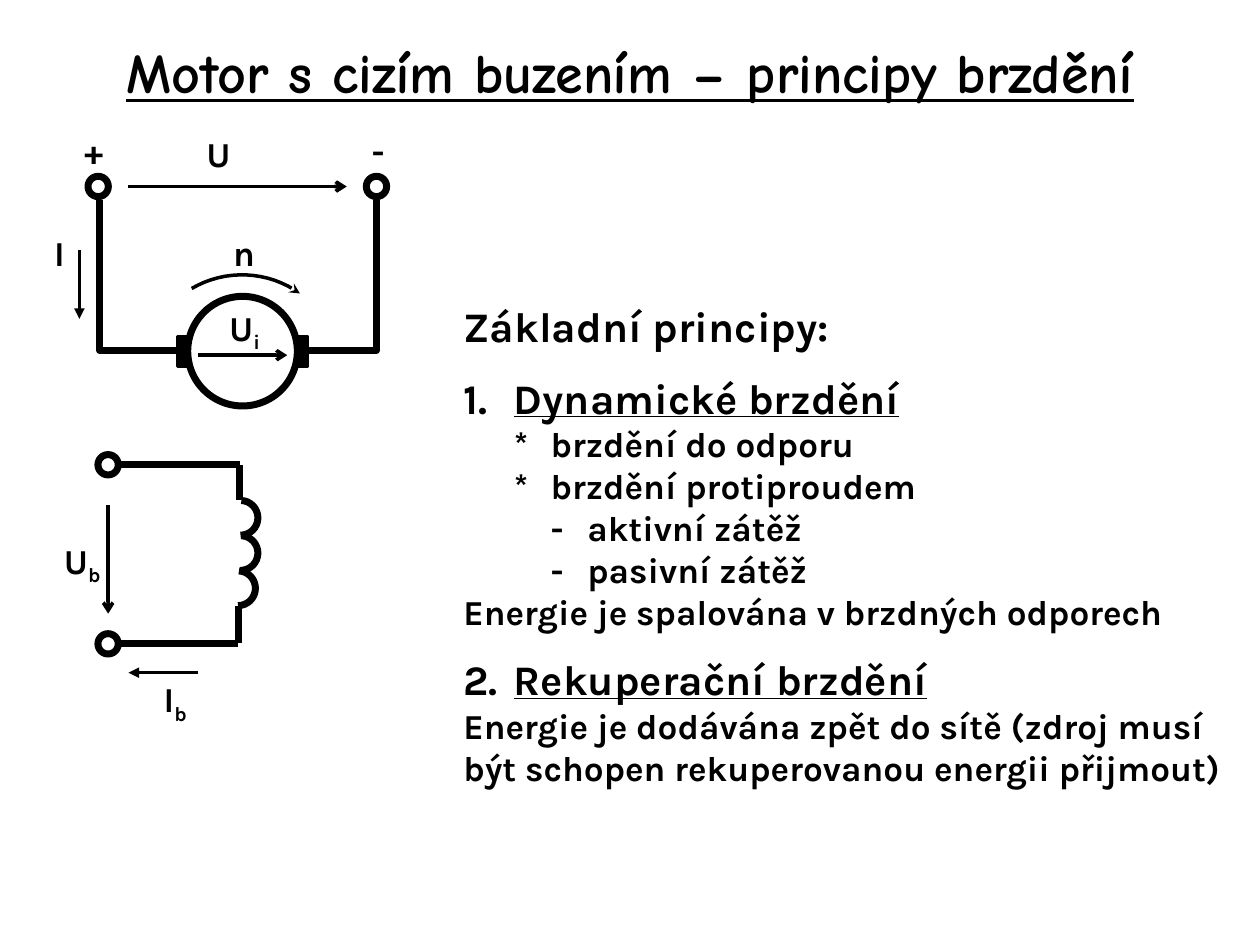
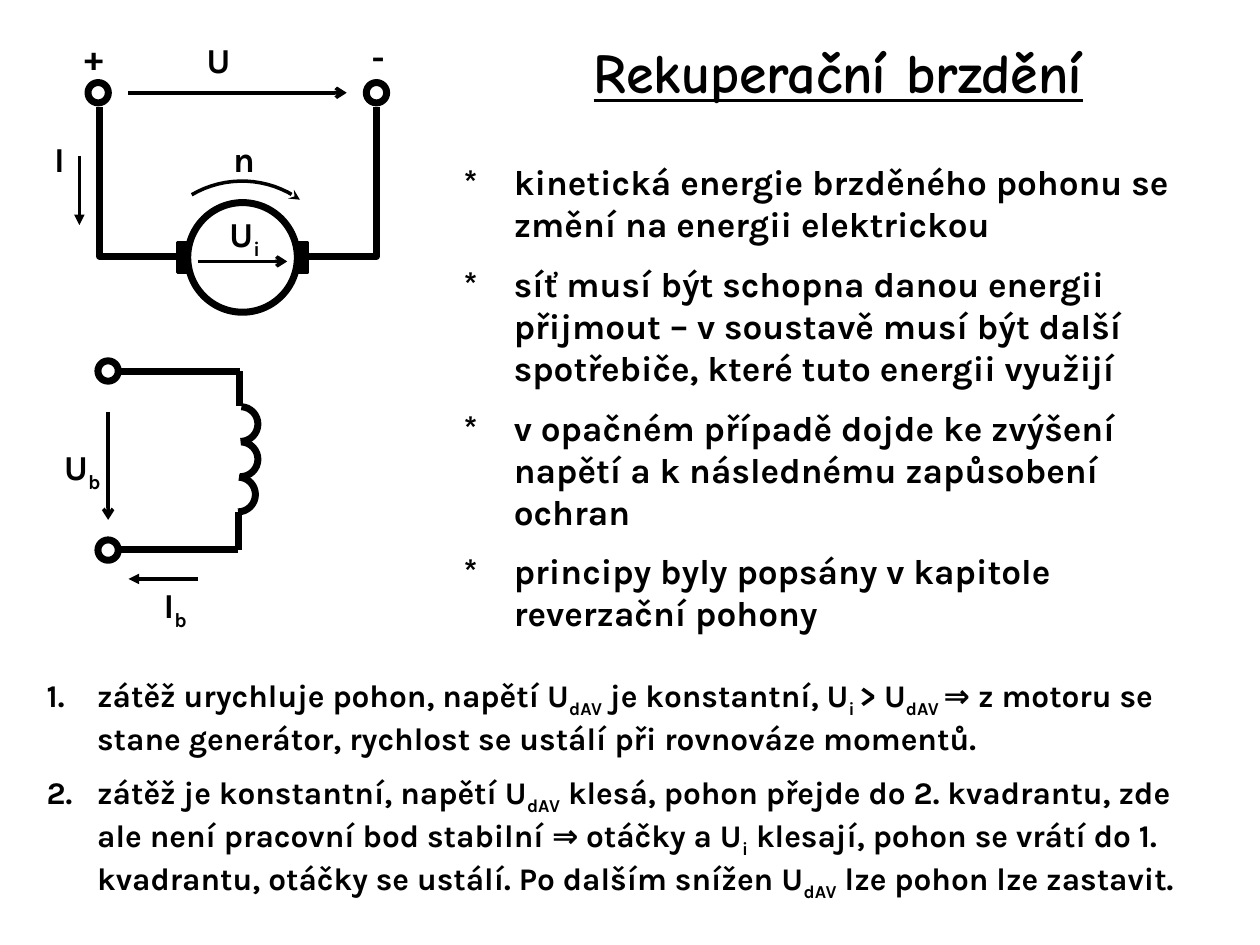
import math

import pptx
import pptx.dml.color
import pptx.enum.shapes
import pptx.enum.text
import pptx.oxml.ns
import pptx.util
from lxml import etree
from pptx.util import Cm

INK = "000000"
TITLE_FONT = "Comic Neue"
BODY_FONT = "Karla"
THICK, THIN = 4, 2
BODY_LEFT, BODY_WIDTH = 9.09, 15.8
INDENT = 1.02
TAB_STOPS = (INDENT, 1.76, 2.5)
CIRCUIT_RISE = 1.89

TERMINALS = [(1.98, 3.76), (7.59, 3.76), (2.18, 9.37), (2.18, 12.98)]
BRUSH_LEFTS = [3.58, 5.99]
MOTOR_CENTRE = (4.89, 7.08)
COIL_TURNS = [(4.85, 10.44), (4.85, 11.15), (4.8, 11.86)]
FIELD_WIRES = [
    ((4.83, 9.37), (4.83, 10.08)),
    ((4.8, 12.22), (4.8, 12.97)),
    ((4.83, 9.37), (2.44, 9.37)),
    ((4.8, 12.97), (2.39, 12.97)),
]
ARMATURE_WIRES = [((3.56, 7.06), (2.01, 4.04)), ((6.22, 7.06), (7.59, 4.04))]
ARROWS = [
    ((2.59, 3.76), (6.99, 3.76), "arrow"),
    ((3.99, 7.16), (5.79, 7.16), "arrow"),
    ((2.18, 10.19), (2.18, 12.37), "arrow"),
    ((3.99, 13.56), (2.59, 13.56), "triangle"),
    ((1.6, 5.03), (1.6, 6.43), "triangle"),
]
LABELS = [
    ("U", 4.06, 2.57, 0.71),
    ("+", 1.6, 2.51, 0.79),
    ("-", 7.39, 2.51, 0.51),
    ("U|i", 4.52, 6.07, 0.86),
    ("n", 4.6, 4.57, 0.66),
    ("I", 0.99, 4.57, 0.53),
    ("U|b", 1.19, 10.77, 1.02),
    ("I|b", 3.2, 13.56, 0.84),
]

PRINCIPLES = [
    ("Základní principy:", 24, False),
    ("1.\t|Dynamické brzdění", 24, True),
    ("\t*\tbrzdění do odporu", 20, False),
    ("\t*\tbrzdění protiproudem", 20, False),
    ("\t\t-\taktivní zátěž", 20, False),
    ("\t\t-\tpasivní zátěž", 20, False),
    ("Energie je spalována v brzdných odporech", 20, False),
    ("2.\t|Rekuperační brzdění", 24, True),
    ("Energie je dodávána zpět do sítě (zdroj musí být schopen "
     "rekuperovanou energii přijmout)", 20, False),
]
REGENERATION = [
    "*\tkinetická energie brzděného pohonu se změní na energii elektrickou",
    "*\tsíť musí být schopna danou energii přijmout – v soustavě musí být "
    "další spotřebiče, které tuto energii využijí",
    "*\tv opačném případě dojde ke zvýšení napětí a k následnému "
    "zapůsobení ochran",
    "*\tprincipy byly popsány v kapitole reverzační pohony",
]
CASES = [
    "1.\tzátěž urychluje pohon, napětí U|dAV| je konstantní, U|i |> U|dAV |"
    "⇒ z motoru se stane generátor, rychlost se ustálí při rovnováze momentů.",
    "2.\tzátěž je konstantní, napětí U|dAV| klesá, pohon přejde do 2. kvadrantu, "
    "zde ale není pracovní bod stabilní ⇒ otáčky a U|i| klesají, pohon se vrátí "
    "do 1. kvadrantu, otáčky se ustálí. Po dalším snížen U|dAV| lze pohon lze "
    "zastavit.",
]


def colour(code):
    return pptx.dml.color.RGBColor.from_string(code)


def add_element(parent, tag, **attributes):
    return etree.SubElement(parent, pptx.oxml.ns.qn(tag), **attributes)


def write_span(para, text, size=20, font=BODY_FONT, underline=False, subscript=False):
    span = para.add_run()
    span.text = text
    span.font.size = pptx.util.Pt(size)
    span.font.name = font
    span.font.bold = True
    span.font.underline = underline
    span.font.color.rgb = colour(INK)
    if subscript:
        span._r.get_or_add_rPr().set("baseline", "-25000")


def write_para(frame, text, size=20, mark="subscript", gap=False, hanging=False):
    first = frame.paragraphs[0]
    para = frame.add_paragraph() if first.runs else first
    para.alignment = pptx.enum.text.PP_ALIGN.LEFT
    if gap:
        para.space_before = pptx.util.Pt(size / 2)
    for index, piece in enumerate(text.split("|")):
        if piece:
            write_span(para, piece, size=size, **{mark: index % 2 == 1})
    properties = para._p.get_or_add_pPr()
    if hanging:
        properties.set("marL", str(Cm(INDENT)))
        properties.set("indent", str(-Cm(INDENT)))
    elif "\t" in text:
        tabs = add_element(properties, "a:tabLst")
        for stop in TAB_STOPS:
            add_element(tabs, "a:tab", pos=str(Cm(stop)), algn="l")


def add_box(shapes, left, top, width, height, wrap=True):
    box = shapes.add_textbox(Cm(left), Cm(top), Cm(width), Cm(height))
    frame = box.text_frame
    frame.word_wrap = wrap
    frame.auto_size = pptx.enum.text.MSO_AUTO_SIZE.SHAPE_TO_FIT_TEXT
    return frame


def add_label(shapes, text, left, top, width):
    frame = add_box(shapes, left, top, width, 1.04, wrap=False)
    frame.margin_left = frame.margin_right = Cm(0.1)
    frame.margin_top = frame.margin_bottom = Cm(0.1)
    write_para(frame, text)


def set_line(item, weight, head=None):
    item.line.color.rgb = colour(INK)
    item.line.width = pptx.util.Pt(weight)
    if head:
        outline = item.element.spPr.find(pptx.oxml.ns.qn("a:ln"))
        add_element(outline, "a:tailEnd", type=head)


def add_wire(shapes, start, end, weight=THICK, head=None, bent=False):
    kind = pptx.enum.shapes.MSO_CONNECTOR
    wire = shapes.add_connector(
        kind.ELBOW if bent else kind.STRAIGHT, *map(Cm, start + end))
    properties = wire.element.spPr
    if bent:
        properties.find(pptx.oxml.ns.qn("a:prstGeom")).set("prst", "bentConnector2")
    set_line(wire, weight, head)
    add_element(properties, "a:effectLst")


def add_preset(shapes, kind, left, top, width, height, weight=THICK, fill=None):
    shape = shapes.add_shape(kind, Cm(left), Cm(top), Cm(width), Cm(height))
    shape.shadow.inherit = False
    if fill:
        shape.fill.solid()
        shape.fill.fore_color.rgb = colour(fill)
    else:
        shape.fill.background()
    set_line(shape, weight)


def add_circle(shapes, centre, diameter):
    left, top = (value - diameter / 2 for value in centre)
    add_preset(shapes, pptx.enum.shapes.MSO_SHAPE.OVAL, left, top, diameter, diameter)


def add_arc(shapes, centre, radius, start, end, weight=THICK, head=None, steps=16):
    points = []
    for step in range(steps + 1):
        angle = math.radians(start + (end - start) * step / steps)
        points.append((Cm(centre[0] + radius * math.cos(angle)),
                       Cm(centre[1] + radius * math.sin(angle))))
    builder = shapes.build_freeform(*points[0])
    builder.add_line_segments(points[1:], close=False)
    arc = builder.convert_to_shape()
    arc.shadow.inherit = False
    arc.fill.background()
    set_line(arc, weight, head)


def draw_circuit(page, rise=0):
    group = page.shapes.add_group_shape()
    shapes = group.shapes
    for centre in COIL_TURNS:
        add_arc(shapes, centre, 0.35, -87, 90)
    for start, end in FIELD_WIRES:
        add_wire(shapes, start, end)
    for start, end in ARMATURE_WIRES:
        add_wire(shapes, start, end, bent=True)
    for centre in TERMINALS:
        add_circle(shapes, centre, 0.41)
    add_circle(shapes, MOTOR_CENTRE, 2.21)
    for left in BRUSH_LEFTS:
        add_preset(shapes, pptx.enum.shapes.MSO_SHAPE.RECTANGLE,
                   left, 6.78, 0.2, 0.61, weight=THIN, fill=INK)
    for start, end, head in ARROWS:
        add_wire(shapes, start, end, weight=THIN, head=head)
    add_arc(shapes, (4.88, 7.54), 2, -120.5, -54.3, weight=THIN, head="stealth")
    for label in LABELS:
        add_label(shapes, *label)
    group.top -= Cm(rise)


def add_page(deck, title, left, width):
    page = deck.slides.add_slide(deck.slide_layouts[5])
    holder = page.shapes.title
    holder.left, holder.top = Cm(left), Cm(0.53)
    holder.width, holder.height = Cm(width), Cm(1.8)
    frame = holder.text_frame
    frame.word_wrap = True
    frame.auto_size = pptx.enum.text.MSO_AUTO_SIZE.NONE
    frame.vertical_anchor = pptx.enum.text.MSO_ANCHOR.MIDDLE
    para = frame.paragraphs[0]
    para.alignment = pptx.enum.text.PP_ALIGN.CENTER
    write_span(para, title, size=32, font=TITLE_FONT, underline=True)
    return page


def write_list(page, items, size, left, top, width, height):
    frame = add_box(page.shapes, left, top, width, height)
    for index, text in enumerate(items):
        write_para(frame, text, size=size, gap=index > 0, hanging=True)


def build_principles(deck):
    page = add_page(deck, "Motor s cizím buzením – principy brzdění", 0.5, 24.4)
    draw_circuit(page)
    frame = add_box(page.shapes, BODY_LEFT, 5.94, BODY_WIDTH, 11.2)
    for text, size, heading in PRINCIPLES:
        write_para(frame, text, size=size, mark="underline", gap=heading)


def build_regeneration(deck):
    page = add_page(deck, "Rekuperační brzdění", 8.9, 16)
    draw_circuit(page, rise=CIRCUIT_RISE)
    write_list(page, REGENERATION, 20, BODY_LEFT, 3.12, BODY_WIDTH, 9.98)
    write_list(page, CASES, 18, 0.69, 13.51, 24.2, 5.2)


def main():
    deck = pptx.Presentation()
    deck.slide_width, deck.slide_height = Cm(25.4), Cm(19.05)
    build_principles(deck)
    build_regeneration(deck)
    deck.save("out.pptx")


if __name__ == "__main__":
    main()
